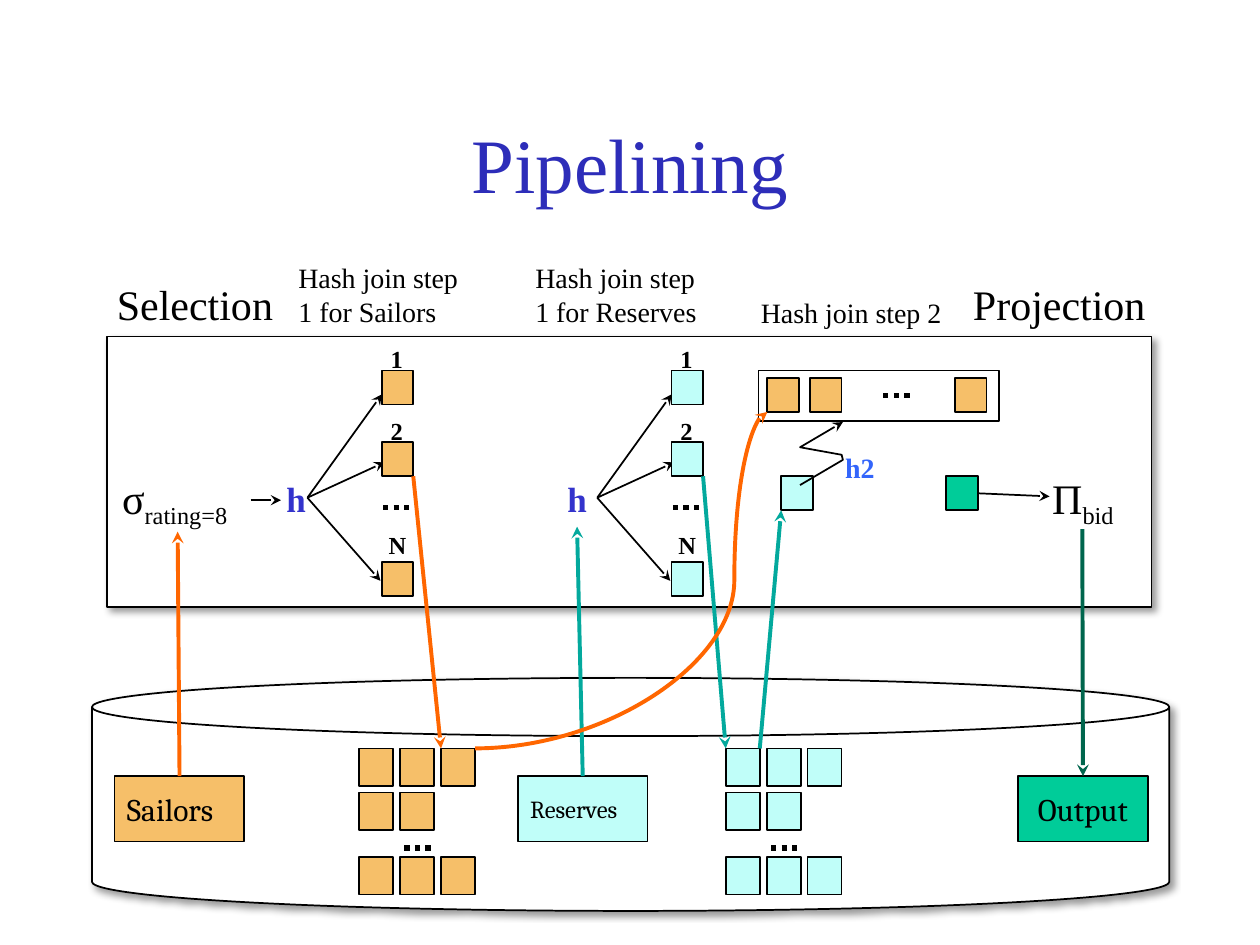
from pptx import Presentation
from pptx.dml.color import RGBColor
from pptx.enum.dml import MSO_LINE
from pptx.enum.shapes import MSO_CONNECTOR, MSO_SHAPE
from pptx.enum.text import MSO_ANCHOR, MSO_AUTO_SIZE, PP_ALIGN
from pptx.oxml import parse_xml
from pptx.oxml.ns import nsdecls
from pptx.util import Inches, Pt

BLACK = RGBColor(0x00, 0x00, 0x00)
WHITE = RGBColor(0xFF, 0xFF, 0xFF)
TITLE_BLUE = RGBColor(0x2D, 0x2D, 0xB9)
HASH_BLUE = RGBColor(0x33, 0x33, 0xCC)
PROBE_BLUE = RGBColor(0x33, 0x65, 0xFB)
AMBER = RGBColor(0xF6, 0xBF, 0x69)
AQUA = RGBColor(0xC0, 0xFE, 0xF9)
GREEN = RGBColor(0x00, 0xCC, 0x99)
DARK_GREEN = RGBColor(0x00, 0x66, 0x4D)
ORANGE = RGBColor(0xFF, 0x66, 0x00)
TEAL = RGBColor(0x03, 0xA9, 0x9D)

SHADOW = (
    f'<a:effectLst {nsdecls("a")}><a:outerShdw blurRad="50800" dist="38100" '
    'dir="2700000" algn="tl" rotWithShape="0"><a:srgbClr val="000000">'
    '<a:alpha val="40000"/></a:srgbClr></a:outerShdw></a:effectLst>'
)


class PipelineSlide:
    serif = "Times New Roman"
    label_font = "Cambria"

    def __init__(self, deck):
        self.page = deck.slides.add_slide(deck.slide_layouts[5])
        self.shapes = self.page.shapes

    def fill_text(self, box, text, size, color=BLACK, bold=False,
                  align=PP_ALIGN.LEFT, font=serif, subscript=None):
        para = box.text_frame.paragraphs[0]
        para.alignment = align
        para.font.size = Pt(size)
        para.font.name = font
        para.font.bold = bold
        para.font.color.rgb = color
        para.add_run().text = text
        if subscript:
            span = para.add_run()
            span.text = subscript
            span.font._element.set("baseline", "-25000")

    def title(self, text):
        box = self.shapes.title
        box.left, box.top = Inches(0.75), Inches(0.67)
        box.width, box.height = Inches(8.5), Inches(1.25)
        box.text_frame.vertical_anchor = MSO_ANCHOR.MIDDLE
        self.fill_text(box, text, 44, TITLE_BLUE, align=PP_ALIGN.CENTER)

    def text(self, left, top, width, height, text, size, wrap=True, fill=None, **style):
        box = self.shapes.add_textbox(
            Inches(left), Inches(top), Inches(width), Inches(height))
        box.text_frame.word_wrap = wrap
        box.text_frame.auto_size = MSO_AUTO_SIZE.SHAPE_TO_FIT_TEXT
        if fill is not None:
            box.fill.solid()
            box.fill.fore_color.rgb = fill
        self.fill_text(box, text, size, **style)

    def box(self, left, top, width, height, fill=None,
            preset=MSO_SHAPE.RECTANGLE, shadow=False):
        box = self.shapes.add_shape(
            preset, Inches(left), Inches(top), Inches(width), Inches(height))
        if fill is None:
            box.fill.background()
        else:
            box.fill.solid()
            box.fill.fore_color.rgb = fill
        box.line.color.rgb = BLACK
        box.line.width = Pt(1)
        if shadow:
            box._element.spPr.append(parse_xml(SHADOW))
        else:
            box.shadow.inherit = False
        return box

    def table_box(self, left, fill, text, size, wrap=False, align=PP_ALIGN.LEFT):
        box = self.box(left, 6.16, 1.03, 0.52, fill)
        box.text_frame.word_wrap = wrap
        box.text_frame.vertical_anchor = MSO_ANCHOR.MIDDLE
        self.fill_text(box, text, size, align=align, font=self.label_font)
        return box

    def bucket(self, left, top, fill):
        return self.box(left, top, 0.25, 0.27, fill)

    def arrowhead(self, line):
        line.get_or_add_ln().append(
            parse_xml(f'<a:tailEnd {nsdecls("a")} type="stealth"/>'))

    def line(self, start, end, color=BLACK, width=1, kind=MSO_CONNECTOR.STRAIGHT,
             dotted=False, source=None, target=None):
        line = self.shapes.add_connector(kind, *map(Inches, start + end))
        line.line.color.rgb = color
        line.line.width = Pt(width)
        if dotted:
            line.line.dash_style = MSO_LINE.ROUND_DOT
        else:
            self.arrowhead(line)
        line._element.spPr.append(parse_xml(f'<a:effectLst {nsdecls("a")}/>'))
        if source:
            line.begin_connect(*source)
        if target:
            line.end_connect(*target)
        return line

    def flow(self, start, end, color, **options):
        return self.line(start, end, color, 2.25, **options)

    def ellipsis(self, left, top):
        self.line((left, top), (left + 0.24, top), width=3, dotted=True)

    def curve(self, start, end, color, bend):
        line = self.flow(start, end, color, kind=MSO_CONNECTOR.CURVE)
        geometry = line._element.spPr.prstGeom
        geometry.get_or_add_avLst().append(parse_xml(
            f'<a:gd {nsdecls("a")} name="adj1" fmla="val {bend}"/>'))

    def zigzag(self, points):
        corners = [(Inches(x), Inches(y)) for x, y in points]
        builder = self.shapes.build_freeform(*corners[0])
        builder.add_line_segments(corners[1:], close=False)
        outline = builder.convert_to_shape()
        outline.fill.background()
        outline.line.color.rgb = BLACK
        outline.line.width = Pt(1)
        outline.shadow.inherit = False
        self.arrowhead(outline)

    def partitions(self, left, fill):
        for top, count in ((5.94, 3), (6.29, 2), (6.8, 3)):
            for column in range(count):
                self.box(left + column * 0.325, top, 0.27, 0.3, fill)
        self.ellipsis(left + 0.36, 6.73)

    def hash_stage(self, left, hash_left, fill):
        center = dict(align=PP_ALIGN.CENTER, bold=True, wrap=False)
        self.text(left - 0.03, 3.25, 0.3, 0.34, "2", 14, **center)
        self.text(left - 0.03, 2.68, 0.3, 0.34, "1", 14, fill=WHITE, **center)
        self.text(left - 0.05, 4.16, 0.35, 0.34, "N", 14, **center)
        self.text(hash_left, 3.74, 0.36, 0.44, "h", 20, color=HASH_BLUE, **center)
        for shift, tip in ((0, 3.13), (0.02, 3.67), (-0.01, 4.61)):
            self.line((left - 0.59, 3.95), (left + shift, tip))
        for top in (2.94, 3.51, 4.46):
            self.bucket(left, top, fill)
        self.ellipsis(left + 0.01, 4.03)


def main():
    deck = Presentation()
    deck.slide_width, deck.slide_height = Inches(10), Inches(7.5)
    slide = PipelineSlide(deck)
    slide.title("Pipelining")

    slide.box(0.85, 2.67, 8.29, 2.15, WHITE, shadow=True)
    slide.box(0.73, 5.38, 8.55, 1.85, WHITE, MSO_SHAPE.CAN, shadow=True)
    sailors = slide.table_box(0.91, AMBER, "Sailors", 18)
    reserves = slide.table_box(4.11, AQUA, "Reserves", 14)
    output = slide.table_box(8.08, GREEN, "Output", 18, True, PP_ALIGN.CENTER)
    slide.text(0.87, 3.7, 1.49, 0.5, "σ", 24, subscript="rating=8")
    slide.text(8.03, 3.7, 1.13, 0.5, "П", 24, subscript="bid", align=PP_ALIGN.CENTER)

    slide.partitions(2.85, AMBER)
    slide.partitions(5.76, AQUA)
    slide.hash_stage(3.03, 2.17, AMBER)
    slide.hash_stage(5.33, 4.4, AQUA)
    slide.line((1.99, 3.97), (2.23, 3.97))

    slide.box(6.02, 2.94, 1.91, 0.4)
    for left in (6.09, 6.43, 7.58):
        slide.bucket(left, 3, AMBER)
    slide.ellipsis(7.01, 3.14)
    slide.bucket(6.2, 3.78, AQUA)
    result = slide.bucket(7.51, 3.78, GREEN)
    slide.text(6.61, 3.53, 0.44, 0.37, "h2", 16, wrap=False, color=PROBE_BLUE, bold=True)
    slide.zigzag([(6.35, 3.85), (6.69, 3.65), (6.68, 3.61), (6.35, 3.55), (6.69, 3.35)])
    slide.line((7.76, 3.92), (8.33, 3.94), source=(result, 3))

    slide.flow((1.42, 6.16), (1.41, 4.22), ORANGE, source=(sailors, 0))
    slide.flow((4.62, 6.16), (4.58, 4.18), TEAL, source=(reserves, 0))
    slide.flow((8.59, 4.2), (8.59, 6.16), DARK_GREEN, target=(output, 0))
    slide.flow((3.28, 3.78), (3.5, 5.94), ORANGE)
    slide.flow((5.58, 3.78), (5.76, 5.94), TEAL)
    slide.flow((6.03, 5.94), (6.2, 4.05), TEAL)
    slide.curve((3.77, 5.94), (6.09, 3.27), ORANGE, 88700)

    slide.text(0.83, 2.16, 1.56, 0.5, "Selection", 24)
    slide.text(2.27, 2.02, 1.56, 0.64, "Hash join step 1 for Sailors", 16)
    slide.text(4.15, 2.02, 1.56, 0.64, "Hash join step 1 for Reserves", 16)
    slide.text(5.94, 2.3, 1.69, 0.37, "Hash join step 2", 16)
    slide.text(7.54, 2.16, 1.65, 0.5, "Projection", 24, align=PP_ALIGN.RIGHT)
    deck.save("out.pptx")


if __name__ == "__main__":
    main()
